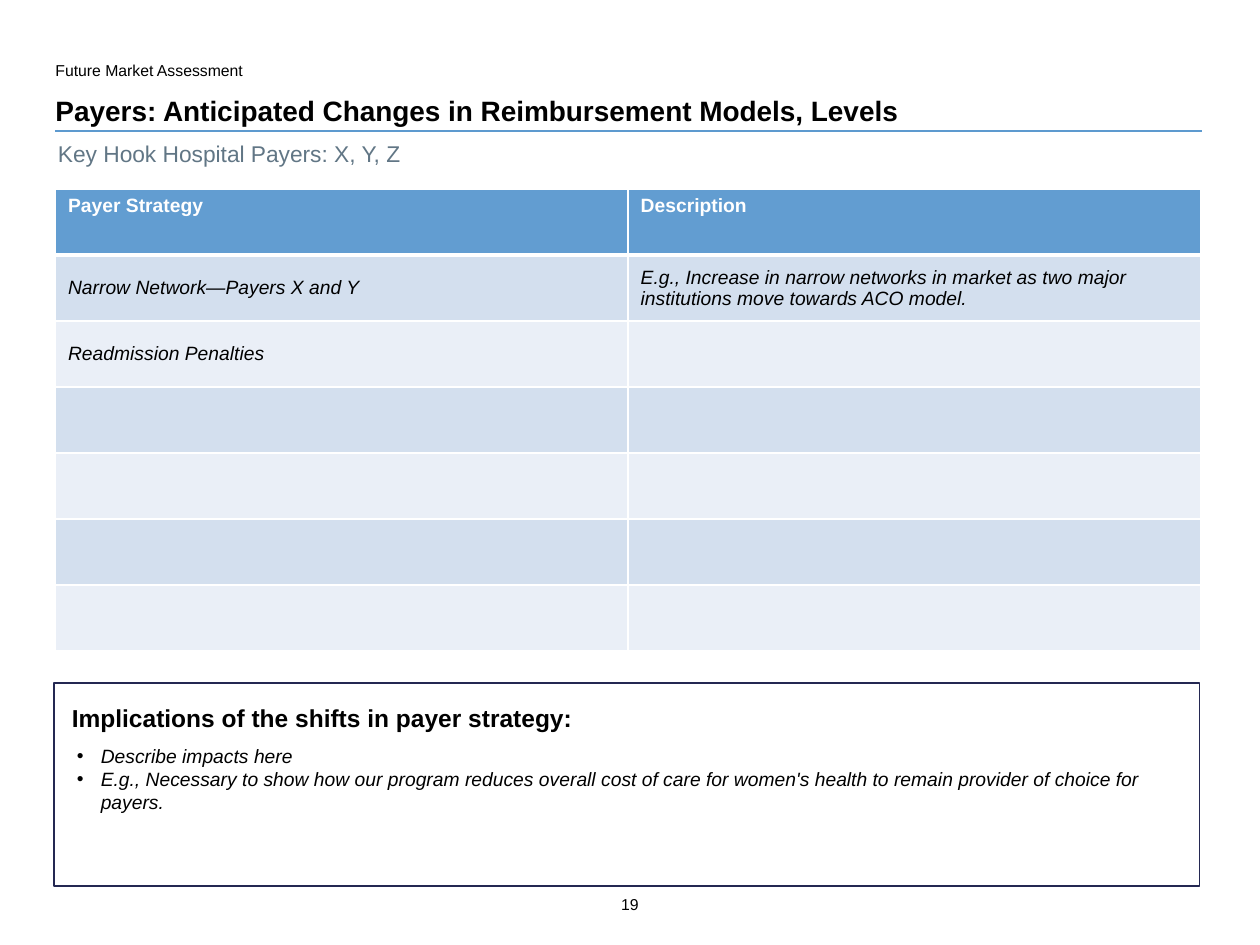
from dataclasses import dataclass

from lxml import etree
from pptx import Presentation
from pptx.dml.color import RGBColor
from pptx.enum import shapes, text
from pptx.oxml import ns
from pptx.util import Inches, Pt

FONT = "Arial"
BLACK, WHITE = "000000", "FFFFFF"
HEADER_FILL, BANDS = "629DD1", ("D3DFEE", "EAEFF7")
LEFT, WIDTH = 0.44, 9.09
ROWS = [
    ("Payer Strategy", "Description"),
    ("Narrow Network—Payers X and Y",
     "E.g., Increase in narrow networks in market as two major "
     "institutions move towards ACO model."),
    ("Readmission Penalties", ""),
] + [("", "")] * 4


@dataclass
class Style:
    size: float
    color: str = BLACK
    bold: bool = False
    italic: bool = False


@dataclass
class Label:
    lines: list[str]
    box: tuple[float, float, float, float]
    style: Style
    inset: tuple[float, float] = (0, 0.04)
    anchor: text.MSO_ANCHOR = text.MSO_ANCHOR.TOP
    align: text.PP_ALIGN = text.PP_ALIGN.LEFT
    bullet: bool = False


LABELS = [
    Label(["19"], (4.66, 7.06, 0.68, 0.26), Style(9), (0.04, 0.04),
          align=text.PP_ALIGN.CENTER),
    Label(["Future Market Assessment"], (LEFT, 0.44, 2.89, 0.2), Style(9)),
    Label(["Payers: Anticipated Changes in Reimbursement Models, Levels"],
          (LEFT, 0.74, WIDTH, 0.27), Style(16, bold=True), (0, 0),
          text.MSO_ANCHOR.BOTTOM),
    Label(["Key Hook Hospital Payers: X, Y, Z"], (0.46, 1.07, WIDTH, 0.3),
          Style(13, "617685")),
    Label(["Implications of the shifts in payer strategy:"],
          (0.43, 5.51, 8.46, 0.38), Style(14, bold=True), (0.14, 0.07)),
    Label(["Describe impacts here",
           "E.g., Necessary to show how our program reduces overall cost of care "
           "for women's health to remain provider of choice for payers."],
          (0.56, 5.86, 8.7, 1.06), Style(11, italic=True), (0.05, 0.05), bullet=True),
]


def rgb(value: str) -> RGBColor:
    return RGBColor.from_string(value)


def format_runs(p, style: Style) -> None:
    for r in p.runs:
        r.font.name = FONT
        r.font.size = Pt(style.size)
        r.font.bold = style.bold
        r.font.italic = style.italic
        r.font.color.rgb = rgb(style.color)


def add_bullet(p) -> None:
    pPr = p._p.get_or_add_pPr()
    indent = Inches(0.19)
    pPr.set("marL", str(indent))
    pPr.set("indent", str(-indent))
    etree.SubElement(pPr, ns.qn("a:buFont")).set("typeface", FONT)
    etree.SubElement(pPr, ns.qn("a:buChar")).set("char", "•")


def add_label(slide, label: Label) -> None:
    tf = slide.shapes.add_textbox(*map(Inches, label.box)).text_frame
    tf.word_wrap = True
    tf.vertical_anchor = label.anchor
    tf.margin_left = tf.margin_right = Inches(label.inset[0])
    tf.margin_top = tf.margin_bottom = Inches(label.inset[1])
    tf.text = "\n".join(label.lines)
    for p in tf.paragraphs:
        p.alignment = label.align
        format_runs(p, label.style)
        if label.bullet:
            add_bullet(p)


def set_borders(cell, widths: dict[str, float]) -> None:
    """Draw white borders; widths are points keyed by side, in L, R, T, B order."""
    tcPr = cell._tc.get_or_add_tcPr()
    for i, (side, width) in enumerate(widths.items()):
        ln = etree.Element(ns.qn(f"a:ln{side}"), w=str(Pt(width)))
        fill = etree.SubElement(ln, ns.qn("a:solidFill"))
        etree.SubElement(fill, ns.qn("a:srgbClr")).set("val", WHITE)
        tcPr.insert(i, ln)


def add_payer_table(slide) -> None:
    table = slide.shapes.add_table(
        len(ROWS), 2, Inches(LEFT), Inches(1.5), Inches(WIDTH), Inches(3.67)).table
    for i, row in enumerate(ROWS):
        header = i == 0
        style = Style(11, WHITE, bold=True) if header else Style(11, italic=True)
        for j, words in enumerate(row):
            cell = table.cell(i, j)
            cell.text = words
            format_runs(cell.text_frame.paragraphs[0], style)
            cell.vertical_anchor = (text.MSO_ANCHOR.TOP if header
                                    else text.MSO_ANCHOR.MIDDLE)
            cell.fill.solid()
            cell.fill.fore_color.rgb = rgb(HEADER_FILL if header else BANDS[(i - 1) % 2])
            set_borders(cell, {"L": 1, "R": 1, "T": 3 if i == 1 else 1,
                               "B": 3 if header else 1})


def add_title_rule(slide) -> None:
    y = Inches(1.04)
    rule = slide.shapes.add_connector(
        shapes.MSO_CONNECTOR.STRAIGHT, Inches(LEFT), y, Inches(9.54), y)
    rule.line.color.rgb = rgb("5D9ACF")
    rule.line.width = Pt(0.75)
    etree.SubElement(rule._element.spPr, ns.qn("a:effectLst"))


def add_implications_frame(slide) -> None:
    s = slide.shapes.add_shape(
        shapes.MSO_SHAPE.RECTANGLE, Inches(0.43), Inches(5.42), Inches(WIDTH), Inches(1.61))
    s.shadow.inherit = False
    s.fill.background()
    s.line.color.rgb = rgb("242852")
    s.line.width = Pt(1)


def main() -> None:
    prs = Presentation()
    prs.slide_width, prs.slide_height = Inches(10), Inches(7.5)
    slide = prs.slides.add_slide(prs.slide_layouts[6])
    add_title_rule(slide)
    add_payer_table(slide)
    add_implications_frame(slide)
    for label in LABELS:
        add_label(slide, label)
    prs.save("out.pptx")


if __name__ == "__main__":
    main()
